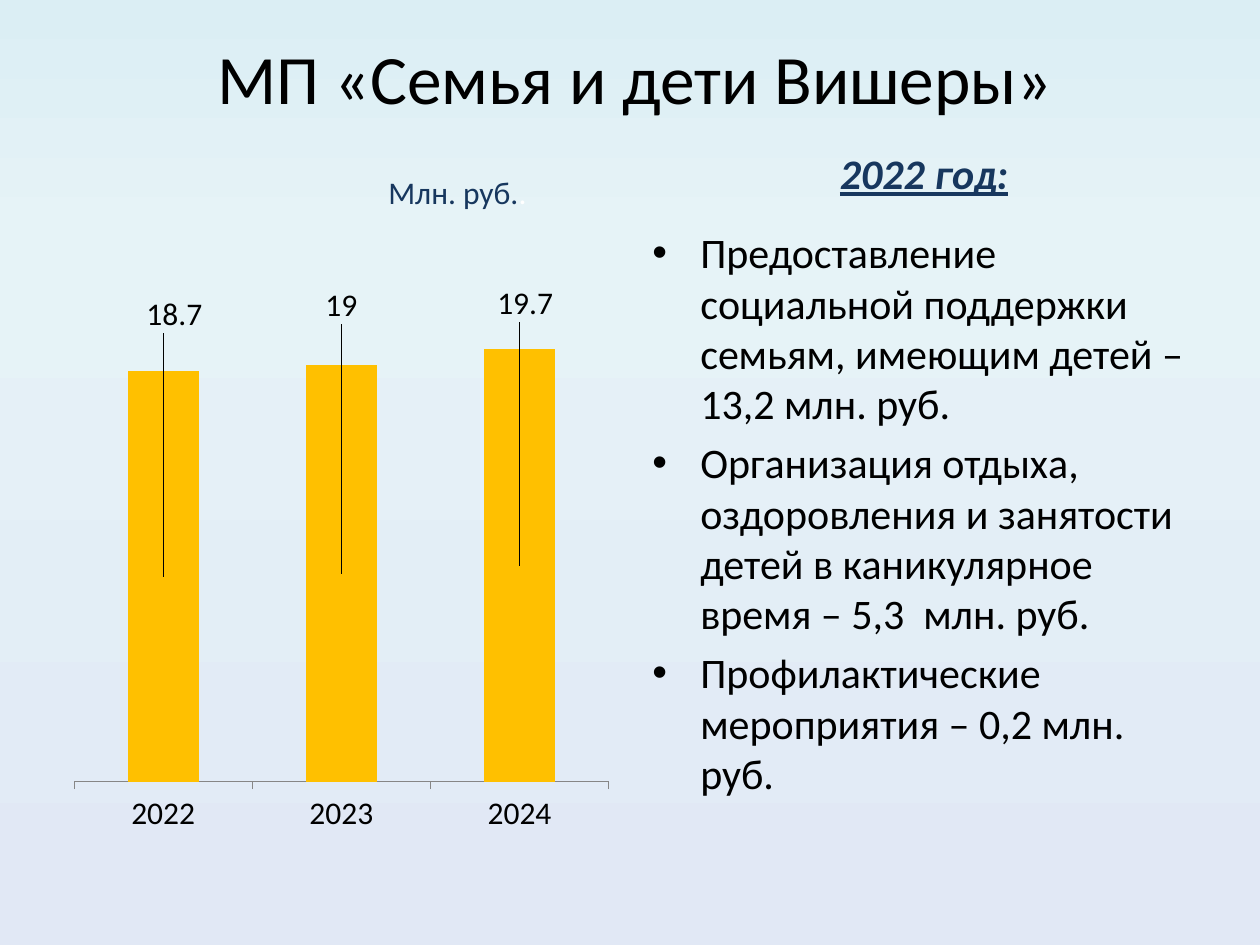
from lxml import etree
from pptx import Presentation
from pptx.chart.data import CategoryChartData
from pptx.dml.color import RGBColor
from pptx.enum.chart import XL_CHART_TYPE, XL_LABEL_POSITION, XL_TICK_LABEL_POSITION, XL_TICK_MARK
from pptx.enum.text import MSO_ANCHOR, PP_ALIGN
from pptx.oxml import parse_xml
from pptx.oxml.ns import nsdecls, qn
from pptx.util import Inches, Pt

STACKED = XL_CHART_TYPE.COLUMN_STACKED
LABEL_CENTER = XL_LABEL_POSITION.CENTER
LABELS_LOW = XL_TICK_LABEL_POSITION.LOW
TICK_NONE, TICK_OUT = XL_TICK_MARK.NONE, XL_TICK_MARK.OUTSIDE
MIDDLE, TOP = MSO_ANCHOR.MIDDLE, MSO_ANCHOR.TOP
CENTER, LEFT = PP_ALIGN.CENTER, PP_ALIGN.LEFT

FONT = "Calibri"
COLORS = {"text": "000000", "navy": "17375E", "white": "FFFFFF", "bar": "FFC000", "axis": "868686"}
BACKGROUND = [(0, "DBEEF4"), (25, "E6F3F7"), (100, "E1E8F5")]

TITLE = "МП «Семья и дети Вишеры»"
YEAR = "2022 год:"
UNIT = [("Млн. руб.", "navy"), (".", "white")]
MEASURES = [
    "Предоставление социальной поддержки семьям, имеющим детей – 13,2 млн. руб.",
    "Организация отдыха, оздоровления и занятости детей в каникулярное время – 5,3  млн. руб.",
    "Профилактические мероприятия – 0,2 млн. руб.",
]
BUDGET = {"2022": 18.7, "2023": 19, "2024": 19.7}
LABEL_SHIFTS = [(0.02, -0.42), (0, -0.43), (0.01, -0.42)]  # fractions of the chart size
PLOT_BOX = {"x": 0.02, "y": 0.02, "w": 0.96, "h": 0.88}


def rgb(name):
    return RGBColor.from_string(COLORS[name])


def style(font, size, color="text"):
    font.name, font.size, font.color.rgb = FONT, Pt(size), rgb(color)


def paint_background(slide):
    stops = "".join(f'<a:gs pos="{pos * 1000}"><a:srgbClr val="{color}"/></a:gs>' for pos, color in BACKGROUND)
    slide.element.cSld.insert(0, parse_xml(
        f'<p:bg {nsdecls("p", "a")}><p:bgPr><a:gradFill rotWithShape="1"><a:gsLst>{stops}</a:gsLst>'
        '<a:lin ang="5400000" scaled="0"/></a:gradFill><a:effectLst/></p:bgPr></p:bg>'))


def add_text(slide, box, paragraphs, size, align=CENTER, anchor=MIDDLE):
    """Each paragraph is a list of (text, colour name) runs."""
    tf = slide.shapes.add_textbox(*map(Inches, box)).text_frame
    tf.word_wrap, tf.vertical_anchor = True, anchor
    for i, runs in enumerate(paragraphs):
        p = tf.paragraphs[0] if i == 0 else tf.add_paragraph()
        p.alignment = align
        for text, color in runs:
            r = p.add_run()
            r.text = text
            style(r.font, size, color)
    return tf


def add_bullet(p):
    p.space_before = Pt(4.8)
    pPr = p._p.get_or_add_pPr()
    pPr.set("marL", str(Inches(0.38)))
    pPr.set("indent", str(-Inches(0.38)))
    etree.SubElement(pPr, qn("a:buFont")).set("typeface", "Arial")
    etree.SubElement(pPr, qn("a:buChar")).set("char", "•")


def manual_layout(**values):
    parts = "".join(f'<c:{key} val="{value}"/>' for key, value in values.items())
    return parse_xml(f'<c:layout {nsdecls("c")}><c:manualLayout>{parts}</c:manualLayout></c:layout>')


def add_budget_chart(slide, box):
    data = CategoryChartData()
    data.categories = list(BUDGET)
    data.add_series("Series 1", list(BUDGET.values()))
    chart = slide.shapes.add_chart(STACKED, *map(Inches, box), data).chart
    chart.has_legend = chart.has_title = False
    style(chart.font, 18)

    values, years = chart.value_axis, chart.category_axis
    values.visible = values.has_major_gridlines = False
    values.minimum_scale, values.maximum_scale = 0, 25
    years.major_tick_mark, years.minor_tick_mark = TICK_OUT, TICK_NONE
    years.tick_label_position = LABELS_LOW
    years.format.line.color.rgb = rgb("axis")

    plot = chart.plots[0]
    plot.gap_width, plot.overlap, plot.vary_by_categories = 150, 100, False
    series = plot.series[0]
    series.format.fill.solid()
    series.format.fill.fore_color.rgb = rgb("bar")
    series.data_labels.show_value = True
    for i in range(len(LABEL_SHIFTS)):
        series.points[i].data_label.position = LABEL_CENTER
    for label, (x, y) in zip(chart.element.iter(qn("c:dLbl")), LABEL_SHIFTS):
        label.find(qn("c:idx")).addnext(manual_layout(x=x, y=y))

    area = chart.element.find(".//" + qn("c:plotArea"))
    for old in area.findall(qn("c:layout")):
        area.remove(old)
    area.insert(0, manual_layout(layoutTarget="inner", xMode="edge", yMode="edge", **PLOT_BOX))


def main():
    prs = Presentation()
    prs.slide_width, prs.slide_height = Inches(10), Inches(7.5)
    slide = prs.slides.add_slide(prs.slide_layouts[6])
    paint_background(slide)

    add_text(slide, (0.25, 0.3, 9.58, 0.62), [[(TITLE, "text")]], 39.6)
    add_budget_chart(slide, (0.5, 1.75, 4.42, 4.95))
    measures = add_text(slide, (5.08, 1.75, 4.42, 4.95), [[(m, "text")] for m in MEASURES], 24, LEFT, TOP)
    for p in measures.paragraphs:
        add_bullet(p)
    year = add_text(slide, (6.5, 1.08, 1.67, 0.58), [[(YEAR, "navy")]], 24)
    font = year.paragraphs[0].runs[0].font
    font.bold = font.italic = font.underline = True
    add_text(slide, (2.92, 1.38, 1.42, 0.29), [UNIT], 18)

    prs.save("out.pptx")


if __name__ == "__main__":
    main()
